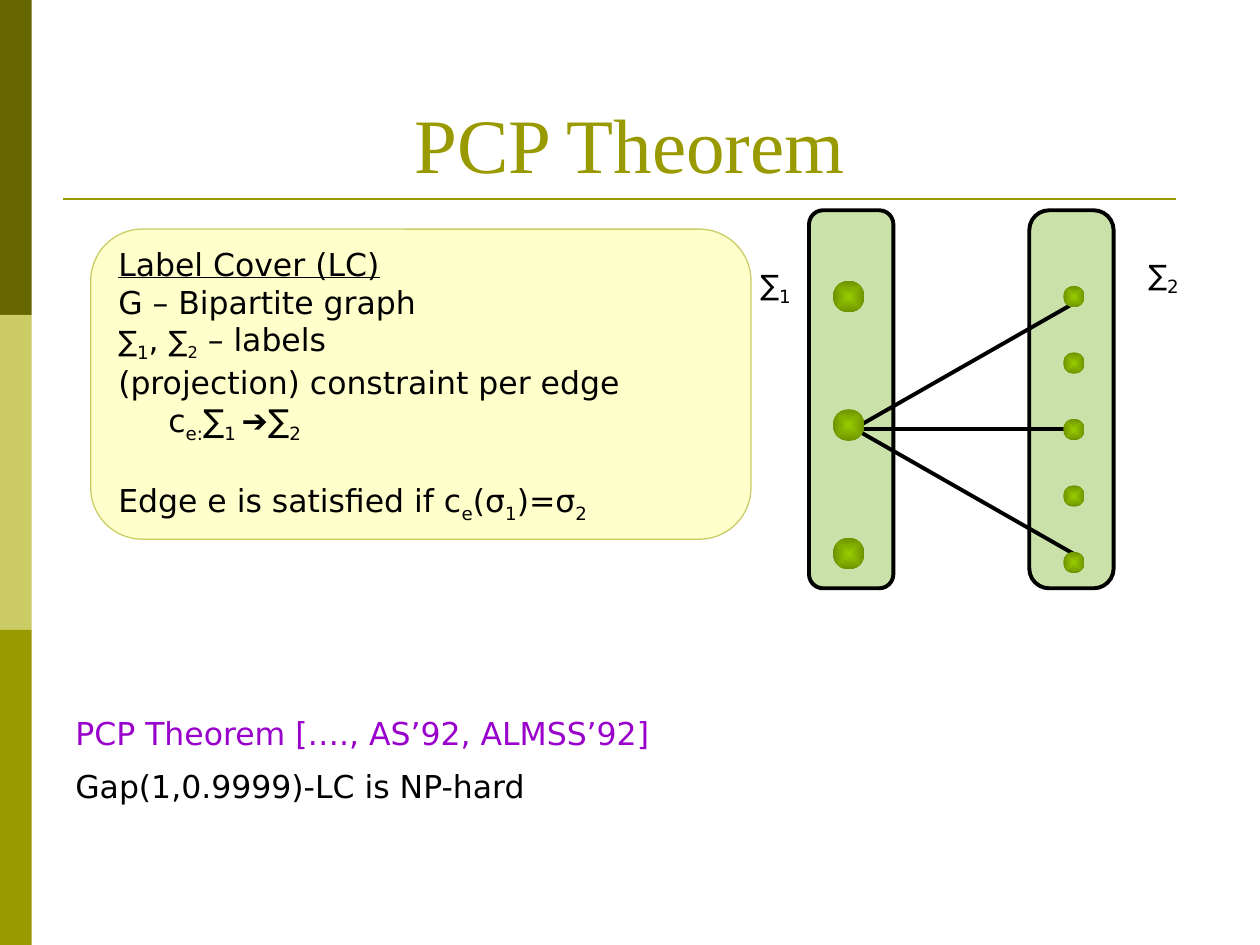
from dataclasses import dataclass, field

import pptx
import pptx.dml.color
import pptx.enum.dml
import pptx.enum.shapes
import pptx.enum.text
import pptx.oxml.ns
import pptx.util
from lxml import etree

Cm = pptx.util.Cm
Pt = pptx.util.Pt
Shape = pptx.enum.shapes.MSO_SHAPE
Anchor = pptx.enum.text.MSO_ANCHOR
Align = pptx.enum.text.PP_ALIGN
qn = pptx.oxml.ns.qn

COLORS = {
    "dark": "666600", "pale": "CCCC66", "olive": "999900",
    "column": "CAE2AA", "note": "FFFFCC", "black": "000000",
    "purple": "9900CC", "node_center": "99CC00", "node_rim": "6D9200",
}


@dataclass
class Run:
    text: str
    size: float = 18
    sub: bool = False
    underline: bool = False
    color: str = "black"
    font: str = "DejaVu Sans"


@dataclass
class Para:
    runs: list[Run]
    align: Align = Align.LEFT
    before: float = 0
    spacing: float = 1.0
    indent: float = 0


@dataclass
class Box:
    left: float
    top: float
    width: float
    height: float
    paras: list[Para] = field(default_factory=list)
    anchor: Anchor = Anchor.TOP
    inset_top: float = 0.13
    wrap: bool = True

    def lengths(self) -> tuple:
        return Cm(self.left), Cm(self.top), Cm(self.width), Cm(self.height)


@dataclass
class NodeColumn:
    x: float
    first_y: float
    step: float
    count: int
    diameter: float


def rgb(name: str) -> pptx.dml.color.RGBColor:
    return pptx.dml.color.RGBColor.from_string(COLORS[name])


def sub(text: str, size: float = 18) -> Run:
    return Run(text, size, sub=True)


def write(sp, box: Box) -> None:
    tf = sp.text_frame
    tf.word_wrap = box.wrap
    tf.vertical_anchor = box.anchor
    tf.margin_top = Cm(box.inset_top)
    for i, para in enumerate(box.paras):
        p = tf.add_paragraph() if i else tf.paragraphs[0]
        p.alignment = para.align
        p.space_before = Pt(para.before)
        p.line_spacing = para.spacing
        if para.indent:
            p._p.get_or_add_pPr().set("marL", str(Cm(para.indent)))
        for run in para.runs:
            r = p.add_run()
            r.text = run.text
            r.font.size = Pt(run.size)
            r.font.name = run.font
            r.font.color.rgb = rgb(run.color)
            r.font.underline = run.underline
            if run.sub:
                r.font._element.set("baseline", "-25000")


def add_text(s, box: Box) -> None:
    write(s.shapes.add_textbox(*box.lengths()), box)


def add_block(s, kind: Shape, box: Box, fill: str, line: str = "", weight: float = 0):
    sp = s.shapes.add_shape(kind, *box.lengths())
    sp.shadow.inherit = False
    sp.fill.solid()
    sp.fill.fore_color.rgb = rgb(fill)
    if line:
        sp.line.color.rgb = rgb(line)
        sp.line.width = Pt(weight)
    else:
        sp.line.fill.background()
    return sp


def add_line(s, x1: float, y1: float, x2: float, y2: float, color: str, weight: float) -> None:
    ln = s.shapes.add_connector(
        pptx.enum.shapes.MSO_CONNECTOR.STRAIGHT, Cm(x1), Cm(y1), Cm(x2), Cm(y2))
    ln.line.color.rgb = rgb(color)
    ln.line.width = Pt(weight)
    etree.SubElement(ln._element.spPr, qn("a:effectLst"))


def add_node(s, x: float, y: float, d: float) -> None:
    sp = add_block(s, Shape.OVAL, Box(x - d / 2, y - d / 2, d, d), "node_rim")
    sp.fill.gradient()
    for stop, name in zip(sp.fill.gradient_stops, ("node_center", "node_rim")):
        stop.color.rgb = rgb(name)
    grad = sp._element.spPr.find(qn("a:gradFill"))
    grad.remove(grad.find(qn("a:lin")))
    radial = etree.SubElement(grad, qn("a:path"), {"path": "shape"})
    etree.SubElement(radial, qn("a:fillToRect"), dict.fromkeys("ltrb", "50000"))


def add_nodes(s, column: NodeColumn) -> None:
    for i in range(column.count):
        add_node(s, column.x, column.first_y + i * column.step, column.diameter)


def add_sigma(s, left: float, top: float, index: str, wrap: bool) -> None:
    para = Para([Run("∑", 16), sub(index)], Align.CENTER, before=3.6, spacing=0.8)
    add_text(s, Box(left, top, 1.19, 0.83, [para], wrap=wrap))


def main() -> None:
    prs = pptx.Presentation()
    prs.slide_width, prs.slide_height = Cm(25.4), Cm(19.05)
    s = prs.slides.add_slide(prs.slide_layouts[6])

    for i, color in enumerate(("dark", "pale", "olive")):
        add_block(s, Shape.RECTANGLE, Box(0, i * 6.35, 0.64, 6.35), color)
    add_line(s, 1.27, 4.01, 23.7, 4.01, "olive", 1.5)

    title = Run("PCP Theorem", 44, color="olive", font="Times New Roman")
    add_text(s, Box(1.27, 0.76, 22.86, 3.18, [Para([title], Align.CENTER)], Anchor.BOTTOM))

    for left, rounding in ((20.75, 0.235), (16.31, 0.167)):
        sp = add_block(s, Shape.ROUNDED_RECTANGLE, Box(left, 4.24, 1.7, 7.62),
                       "column", "black", 2.25)
        sp.adjustments[0] = rounding
    for rise in (2.54, 0, -2.54):
        add_line(s, 17.22, 8.64, 21.67, 8.64 + rise, "black", 2.25)
    add_nodes(s, NodeColumn(17.11, 5.98, 2.59, 3, 0.64))
    add_nodes(s, NodeColumn(21.65, 5.98, 1.34, 5, 0.43))

    note = Box(1.83, 4.62, 13.31, 6.25, [
        Para([Run("Label Cover (LC)", underline=True)]),
        Para([Run("G – Bipartite graph")]),
        Para([Run("∑", 16), sub("1"), Run(", "), Run("∑", 16), sub("2", 16),
              Run(" – labels")]),
        Para([Run("(projection) constraint per edge")]),
        Para([Run("c"), sub("e:"), Run("∑"), sub("1 "), Run("➔", font="Arial"),
              Run("∑"), sub("2")], indent=1.01),
        Para([Run("Edge e is satisfied if c"), sub("e"), Run("(σ"), sub("1"),
              Run(")=σ"), sub("2")], before=21),
    ], Anchor.MIDDLE)
    write(add_block(s, Shape.ROUNDED_RECTANGLE, note, "note", "pale", 0.75), note)

    add_text(s, Box(1.27, 12.07, 23.29, 6.98, [
        Para([Run("PCP Theorem […., AS’92, ALMSS’92]", color="purple")]),
        Para([Run("Gap(1,0.9999)-LC is NP-hard")], before=9),
    ], inset_top=2.32))

    add_sigma(s, 15.04, 5.28, "1", True)
    add_sigma(s, 22.86, 5.08, "2", False)

    prs.save("out.pptx")


if __name__ == "__main__":
    main()
